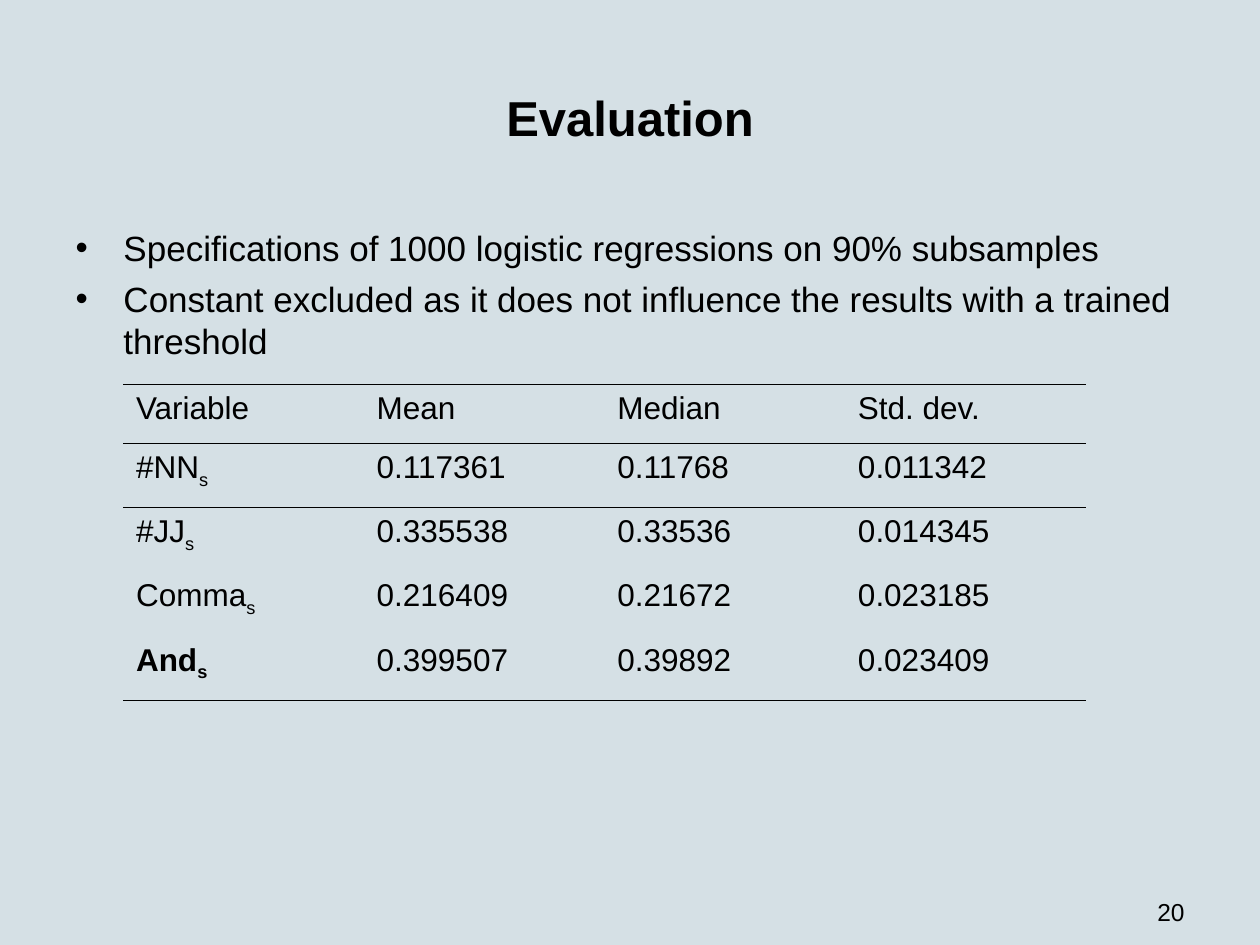
from typing import NamedTuple

from lxml import etree
from pptx import Presentation
from pptx.dml.color import RGBColor
from pptx.enum import text as t
from pptx.oxml import ns
from pptx.util import Inches, Pt

BLACK = RGBColor(0x00, 0x00, 0x00)
BACKGROUND = RGBColor(0xD5, 0xE0, 0xE5)
FONT = "Arial"
COLUMN_WIDTH = 1.91
HEADER_HEIGHT, ROW_HEIGHT = 0.47, 0.51
RULES = {0, 1, 2, 5}  # row boundaries that carry a line


class Row(NamedTuple):
    variable: str
    mean: str
    median: str
    deviation: str
    subscript: str = ""
    bold: bool = False


ROWS = [
    Row("Variable", "Mean", "Median", "Std. dev."),
    Row("#NN", "0.117361", "0.11768", "0.011342", "s"),
    Row("#JJ", "0.335538", "0.33536", "0.014345", "s"),
    Row("Comma", "0.216409", "0.21672", "0.023185", "s"),
    Row("And", "0.399507", "0.39892", "0.023409", "s", bold=True),
]
POINTS = [
    "Specifications of 1000 logistic regressions on 90% subsamples",
    "Constant excluded as it does not influence the results with a trained threshold",
]


def write(paragraph, text: str, size: float, bold: bool = False,
          align=t.PP_ALIGN.LEFT, baseline: int = 0) -> None:
    """Append a formatted run; baseline is a percentage, negative for subscript."""
    paragraph.alignment = align
    run = paragraph.add_run()
    run.text = text
    run.font.name = FONT
    run.font.size = Pt(size)
    run.font.bold = bold
    run.font.color.rgb = BLACK
    if baseline:
        run.font._element.set("baseline", str(baseline * 1000))


def place(shape, left: float, top: float, width: float, height: float) -> None:
    shape.left, shape.top = Inches(left), Inches(top)
    shape.width, shape.height = Inches(width), Inches(height)


def set_bullet(paragraph, indent: float) -> None:
    properties = paragraph._p.get_or_add_pPr()
    properties.set("marL", str(Inches(indent)))
    properties.set("indent", str(-Inches(indent)))
    etree.SubElement(properties, ns.qn("a:buChar")).set("char", "•")


def set_borders(cell, ruled_sides: set[str]) -> None:
    """Draw a black line on the ruled sides and clear the others."""
    properties = cell._tc.get_or_add_tcPr()
    for side in "LRTB":
        line = etree.SubElement(properties, ns.qn(f"a:ln{side}"), w=str(Pt(1)))
        if side in ruled_sides:
            fill = etree.SubElement(line, ns.qn("a:solidFill"))
            etree.SubElement(fill, ns.qn("a:srgbClr"), val=str(BLACK))
        else:
            etree.SubElement(line, ns.qn("a:noFill"))


def add_title(slide) -> None:
    title = slide.shapes.title
    place(title, 0.5, 0.3, 9, 1.25)
    title.text_frame.auto_size = t.MSO_AUTO_SIZE.NONE
    title.text_frame.vertical_anchor = t.MSO_ANCHOR.MIDDLE
    write(title.text_frame.paragraphs[0], "Evaluation", 28, bold=True,
          align=t.PP_ALIGN.CENTER)


def add_points(slide) -> None:
    body = slide.placeholders[1]
    place(body, 0.5, 1.75, 8.91, 4.95)
    frame = body.text_frame
    frame.auto_size = t.MSO_AUTO_SIZE.NONE
    for index, point in enumerate(POINTS):
        paragraph = frame.add_paragraph() if index else frame.paragraphs[0]
        paragraph.space_before = Pt(2.4 if index else 0)
        paragraph.space_after = Pt(2.4)
        set_bullet(paragraph, 0.38)
        write(paragraph, point, 20)


def add_results(slide) -> None:
    columns = 4
    height = HEADER_HEIGHT + ROW_HEIGHT * (len(ROWS) - 1)
    table = slide.shapes.add_table(
        len(ROWS), columns, Inches(0.98), Inches(3.05),
        Inches(COLUMN_WIDTH * columns), Inches(height)).table
    table.first_row = table.horz_banding = False
    for column in table.columns:
        column.width = Inches(COLUMN_WIDTH)
    for r, row in enumerate(ROWS):
        table.rows[r].height = Inches(ROW_HEIGHT if r else HEADER_HEIGHT)
        ruled = {side for side, edge in (("T", r), ("B", r + 1)) if edge in RULES}
        for c, value in enumerate(row[:columns]):
            cell = table.cell(r, c)
            set_borders(cell, ruled)
            cell.fill.solid()
            cell.fill.fore_color.rgb = BACKGROUND
            paragraph = cell.text_frame.paragraphs[0]
            bold = row.bold and c == 0
            write(paragraph, value, 18, bold=bold)
            if c == 0 and row.subscript:
                write(paragraph, row.subscript, 18, bold=bold, baseline=-25)


def add_page_number(slide) -> None:
    box = slide.shapes.add_textbox(
        Inches(7.17), Inches(6.83), Inches(2.33), Inches(0.52))
    frame = box.text_frame
    frame.word_wrap = True
    frame.vertical_anchor = t.MSO_ANCHOR.BOTTOM
    frame.margin_bottom = 0
    write(frame.paragraphs[0], "20", 14, align=t.PP_ALIGN.RIGHT)


def main() -> None:
    deck = Presentation()
    deck.slide_width, deck.slide_height = Inches(10), Inches(7.5)
    slide = deck.slides.add_slide(deck.slide_layouts[1])
    slide.background.fill.solid()
    slide.background.fill.fore_color.rgb = BACKGROUND
    add_title(slide)
    add_points(slide)
    add_page_number(slide)
    add_results(slide)
    deck.save("out.pptx")


if __name__ == "__main__":
    main()
